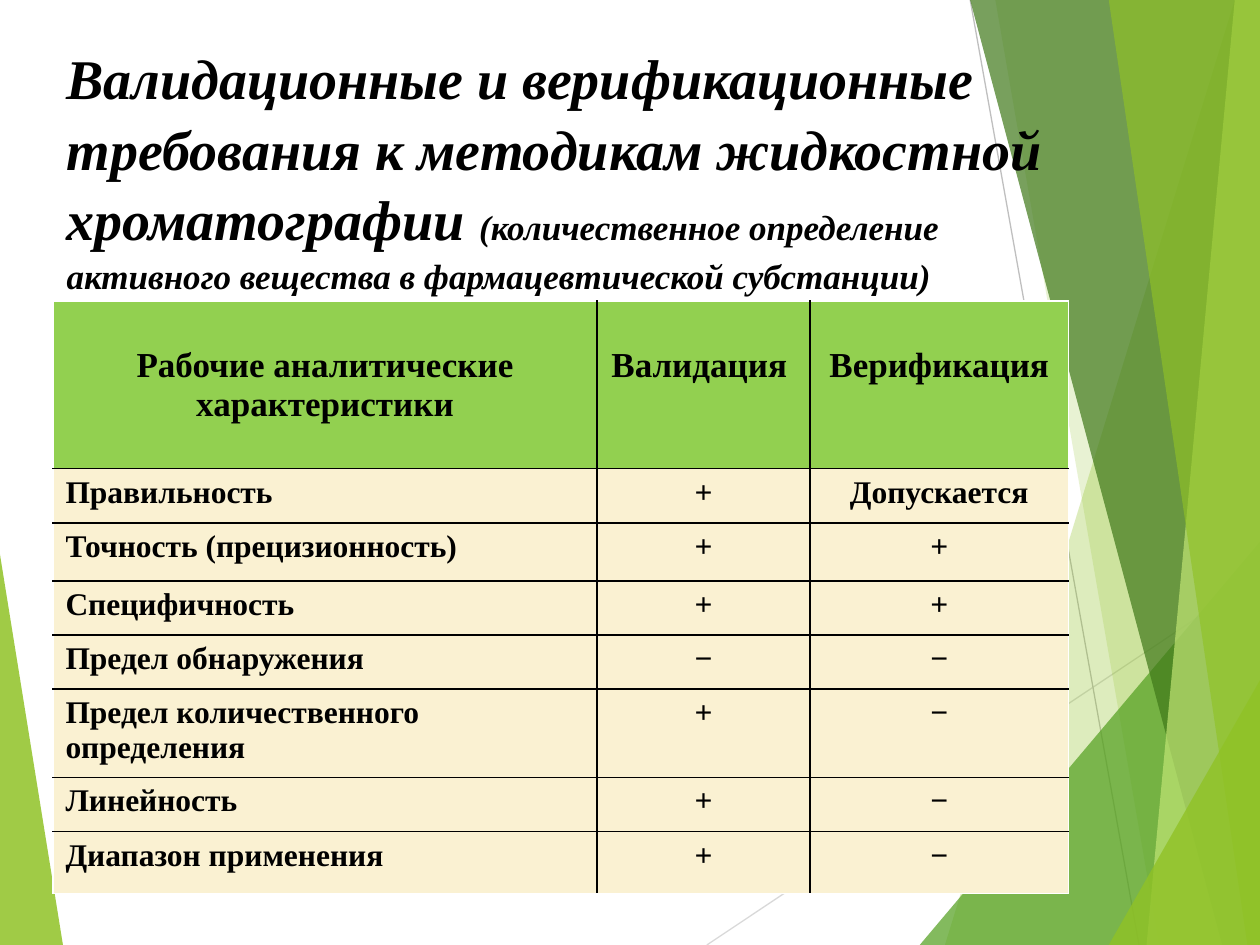
from lxml import etree
from pptx import Presentation
from pptx.dml.color import RGBColor
from pptx.enum.shapes import MSO_CONNECTOR
from pptx.enum.text import MSO_ANCHOR, PP_ALIGN
from pptx.oxml import parse_xml
from pptx.oxml.ns import nsdecls, qn
from pptx.util import Inches, Pt

STRAIGHT = MSO_CONNECTOR.STRAIGHT
MIDDLE = MSO_ANCHOR.MIDDLE
LEFT, CENTER = PP_ALIGN.LEFT, PP_ALIGN.CENTER

COLS, ROWS = 100, 75
UNIT = Inches(0.1)
FONT = "Times New Roman"
HEX = {
    "lime": "90C226", "green": "54A021", "dark": "3F7819", "pale": "C0E474",
    "silver": "D9D9D9", "gray": "BFBFBF", "black": "000000", "white": "FFFFFF",
    "head": "92D050", "body": "FAF1D2",
}

LINES = [((56.1, 75), (100, 45.7), "silver"), ((77, 0), (90.4, 75), "gray")]
SHARDS = [
    ([(0, 43.9), (4.9, 75), (0, 75)], "lime", 85),
    ([(97.5, 0), (75.4, 75), (100, 75), (100, 0)], "lime", 30),
    ([(78.8, 0), (91.9, 75), (100, 75), (100, 0)], "lime", 20),
    ([(72.6, 75), (100, 42.9), (100, 75)], "green", 72),
    ([(76.7, 0), (97, 75), (100, 75), (100, 0)], "dark", 70),
    ([(98.1, 0), (90.7, 75), (100, 75), (100, 0)], "pale", 70),
    ([(88.3, 0), (98.6, 75), (100, 75), (99.8, 0)], "lime", 65),
    ([(88.1, 75), (100, 53.5), (100, 75)], "lime", 80),
]
TITLE = "Валидационные и верификационные требования к методикам жидкостной хроматографии "
SUBTITLE = ["(количественное определение ",
            "активного вещества в фармацевтической субстанции)"]
WIDTHS = [43.2, 16.9, 20.5]
HEIGHTS = [13.3, 4.3, 4.6, 4.3, 4.3, 6.5, 4.3, 4.9]
DATA = [
    ("Рабочие аналитические характеристики", "Валидация ", "Верификация"),
    ("Правильность", "+", "Допускается"),
    ("Точность (прецизионность)", "+", "+"),
    ("Специфичность", "+", "+"),
    ("Предел обнаружения", "−", "−"),
    ("Предел количественного определения", "+", "−"),
    ("Линейность", "+", "−"),
    ("Диапазон применения", "+", "−"),
]


def grid(*units):
    """Turn grid units into lengths."""
    return [round(unit * UNIT) for unit in units]


def tint(name):
    """Look up a colour by name."""
    return RGBColor.from_string(HEX[name])


def style(font, size=None, slant=None):
    """Set the bold black face shared by all text."""
    font.name, font.bold, font.italic = FONT, True, slant
    font.color.rgb = tint("black")
    if size:
        font.size = Pt(size)


def add_line(slide, start, end, color):
    """Draw a thin straight line without a shadow."""
    line = slide.shapes.add_connector(STRAIGHT, *grid(*start, *end))
    line.line.color.rgb = tint(color)
    line.line.width = Pt(0.75)
    etree.SubElement(line._element.spPr, qn("a:effectLst"))


def add_shard(slide, points, color, alpha):
    """Draw a see-through polygon."""
    pen = slide.shapes.build_freeform(*points[0], scale=UNIT)
    pen.add_line_segments(points[1:], close=True)
    shard = pen.convert_to_shape()
    shard.shadow.inherit = False
    shard.line.fill.background()
    shard.fill.solid()
    shard.fill.fore_color.rgb = tint(color)
    tone = shard._element.spPr.find(".//" + qn("a:srgbClr"))
    etree.SubElement(tone, qn("a:alpha"), val=str(alpha * 1000))


def add_title(slide):
    """Write the heading and its smaller ending."""
    frame = slide.shapes.add_textbox(*grid(4.3, 2.8, 85, 21.1)).text_frame
    frame.word_wrap = True
    frame.vertical_anchor = MIDDLE
    para = frame.paragraphs[0]
    para.line_spacing = 1.05
    style(para.font, slant=True)
    for text, size in [(TITLE, 32), (SUBTITLE[0], 20), (SUBTITLE[1], 20)]:
        if text == SUBTITLE[1]:
            para.add_line_break()
        run = para.add_run()
        run.text = text
        run.font.size = Pt(size)


def edge(cell, row, col):
    """Rule a cell, white on the rim of the table and black inside."""
    rims = {"L": col == 0, "R": col == len(WIDTHS) - 1,
            "T": row == 0, "B": row == len(HEIGHTS) - 1}
    props = cell._tc.get_or_add_tcPr()
    for spot, (side, rim) in enumerate(rims.items()):
        color = HEX["white" if rim else "black"]
        props.insert(spot, parse_xml(
            f'<a:ln{side} {nsdecls("a")} w="12700"><a:solidFill>'
            f'<a:srgbClr val="{color}"/></a:solidFill></a:ln{side}>'))


def fill_cell(cell, text, row, col):
    """Write, colour and rule one cell."""
    head = row == 0
    cell.text = text
    para = cell.text_frame.paragraphs[0]
    para.alignment = CENTER if head or col else LEFT
    style(para.font, 20 if head else 18)
    if head:
        cell.margin_top = Inches(0.36)
    cell.fill.solid()
    cell.fill.fore_color.rgb = tint("head" if head else "body")
    edge(cell, row, col)


def add_grid(slide):
    """Build the table of requirements."""
    box = grid(4.2, 23.9, sum(WIDTHS), sum(HEIGHTS))
    table = slide.shapes.add_table(len(HEIGHTS), len(WIDTHS), *box).table
    for col, width in zip(table.columns, grid(*WIDTHS)):
        col.width = width
    for row, height in zip(table.rows, grid(*HEIGHTS)):
        row.height = height
    for row, texts in enumerate(DATA):
        for col, text in enumerate(texts):
            fill_cell(table.cell(row, col), text, row, col)


def main():
    """Build and save the slide."""
    deck = Presentation()
    deck.slide_width, deck.slide_height = grid(COLS, ROWS)
    slide = deck.slides.add_slide(deck.slide_layouts[6])
    add_shard(slide, *SHARDS[0])
    for line in LINES:
        add_line(slide, *line)
    for shard in SHARDS[1:]:
        add_shard(slide, *shard)
    add_title(slide)
    add_grid(slide)
    deck.save("out.pptx")


if __name__ == "__main__":
    main()
